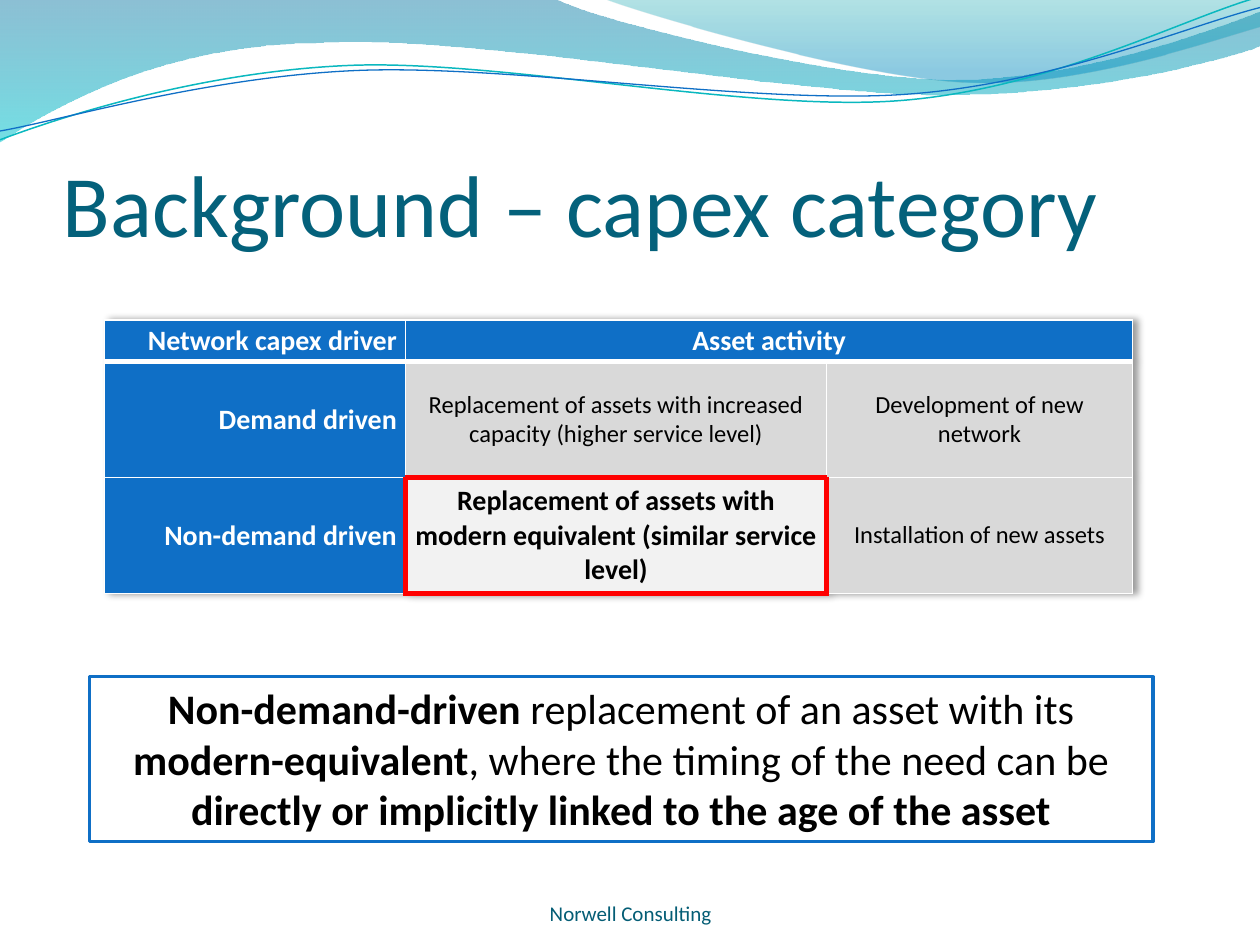
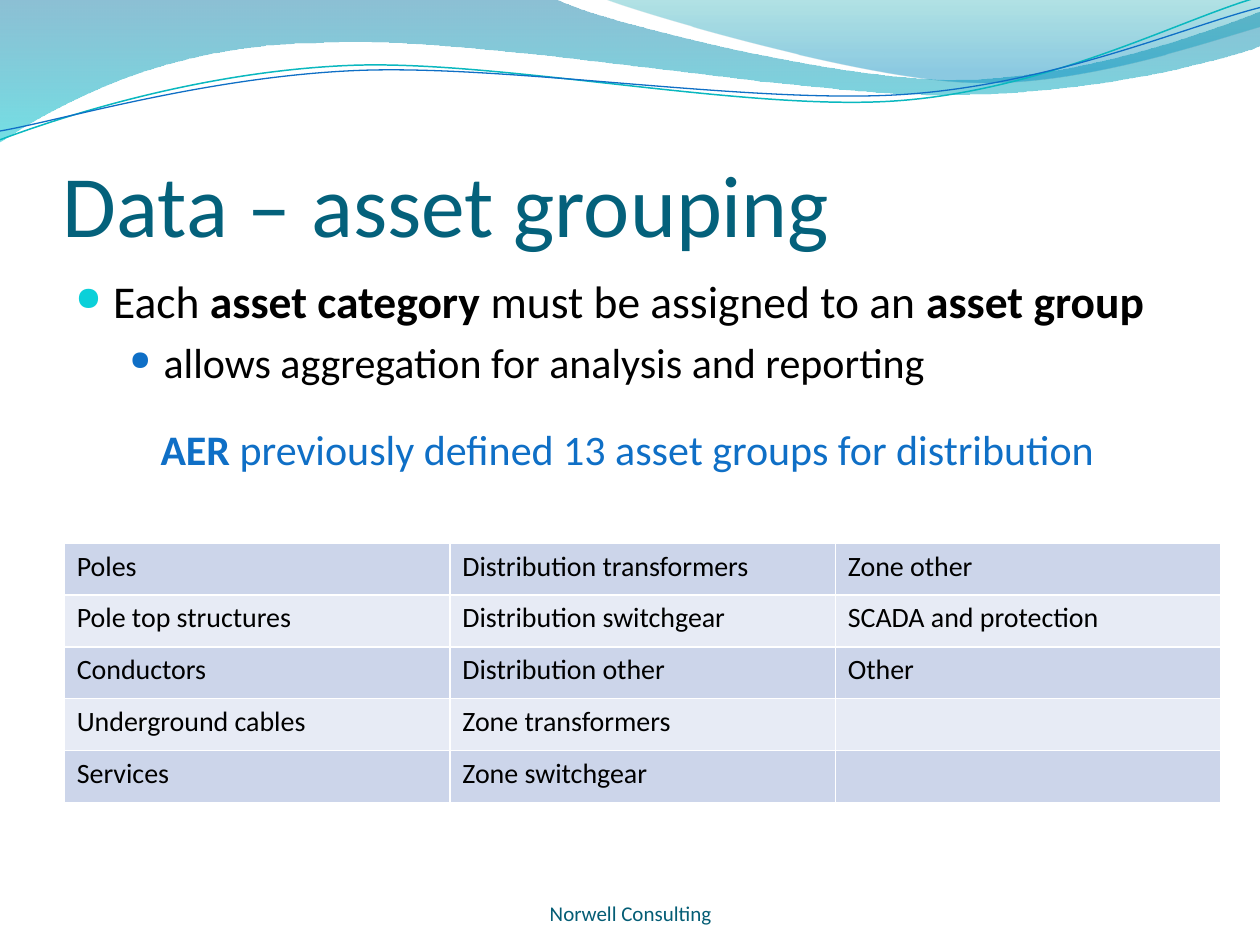
from dataclasses import dataclass
from typing import NamedTuple

from lxml import etree
from pptx import Presentation
from pptx.dml.color import RGBColor
from pptx.enum.shapes import MSO_SHAPE
from pptx.enum.text import MSO_ANCHOR, MSO_AUTO_SIZE, PP_ALIGN
from pptx.oxml.ns import qn
from pptx.util import Inches, Pt

LEFT, CENTER, RIGHT = PP_ALIGN.LEFT, PP_ALIGN.CENTER, PP_ALIGN.RIGHT
TOP, MIDDLE, BOTTOM = MSO_ANCHOR.TOP, MSO_ANCHOR.MIDDLE, MSO_ANCHOR.BOTTOM
RECTANGLE = MSO_SHAPE.RECTANGLE
GROW = MSO_AUTO_SIZE.SHAPE_TO_FIT_TEXT

FONT = "Calibri"
WHITE, BLACK, RED = "FFFFFF", "000000", "FF0000"
BLUE, TITLE_TEAL, FOOTER_TEAL = "0F6FC6", "04617B", "045D75"
CYAN, LINE_TEAL = "0BD0D9", "0AB8BF"
CELL_GREY, HIGHLIGHT_GREY = "D9D9D9", "F2F2F2"
BAND_COLORS = ("CCD5EA", "E7EBF5")

DEFAULT_INSETS = (0.1, 0.05, 0.1, 0.05)
FOOTER = "Norwell Consulting"


class Box(NamedTuple):
    left: float
    top: float
    width: float
    height: float


class Phrase(NamedTuple):
    text: str
    bold: bool = False


class GradientStop(NamedTuple):
    position: float
    color: str
    opacity: int


class Border(NamedTuple):
    color: str
    width: float


@dataclass(frozen=True)
class TextStyle:
    size: float
    color: str = BLACK
    align: PP_ALIGN = LEFT
    before: float = 0
    after: float = 0
    margin: float = 0
    indent: float = 0
    bullet_color: str = ""
    bullet_percent: int = 100
    level: int = 0


@dataclass(frozen=True)
class Wave:
    """Each step is a straight line (one point) or a Bezier curve (three)."""
    start: tuple
    steps: tuple
    stops: tuple = ()
    line: Border | None = None


TITLE = TextStyle(50, TITLE_TEAL)
FOOTER_STYLE = TextStyle(12, FOOTER_TEAL, CENTER)
BULLET = TextStyle(26, before=5, margin=0.3, indent=-0.3,
                   bullet_color=CYAN, bullet_percent=73)
SUB_BULLET = TextStyle(24, before=5, margin=0.7, indent=-0.27,
                       bullet_color=BLUE, bullet_percent=64, level=1)
LEAD_IN = TextStyle(24, BLUE, CENTER, before=5, margin=0.3, indent=-0.3)
CALLOUT = TextStyle(24, align=CENTER)
GROUP_CELL = TextStyle(16)
DRIVER_CELL = TextStyle(16, WHITE, RIGHT, 6, 6)
HEADING_CELL = TextStyle(16, WHITE, CENTER, 6, 6)
ACTIVITY_CELL = TextStyle(14, BLACK, CENTER, 6, 6)
HIGHLIGHT_CELL = TextStyle(16, BLACK, CENTER, 6, 6)

THIN, THICK, MARKED = Border(WHITE, 1), Border(WHITE, 3), Border(RED, 3)
HIGHLIGHT = (2, 1)
SIDES = {"lnL": (0, -1), "lnR": (0, 1), "lnT": (-1, 0), "lnB": (1, 0)}

WAVES = (
    Wave((0, -0.01), (
        [(4.4, -0.01)],
        [(4.76, 0.17), (6.64, 0.63), (7.58, 0.63)],
        [(8.53, 0.63), (9.58, 0.26), (10, 0.09)],
        [(10.01, 0.36)],
        [(9.83, 0.44), (8.7, 0.76), (7.46, 0.75)],
        [(6.22, 0.75), (3.82, 0.28), (2.57, 0.34)],
        [(1.29, 0.35), (0.46, 0.83), (-0.01, 1.13)],
    ), stops=(GradientStop(0, "0074A1", 45), GradientStop(1, "00C6CF", 55))),
    Wave((4.79, -0.01), (
        [(5.09, 0.11), (6.82, 0.62), (7.69, 0.65)],
        [(8.56, 0.69), (9.61, 0.32), (10, 0.21)],
        [(10, 0)],
    ), stops=(GradientStop(0, "00A1A9", 30), GradientStop(0.8, "008BBF", 45))),
    Wave((0, 1.11), (
        [(0.48, 0.93), (1.58, 0.57), (2.77, 0.52)],
        [(3.95, 0.47), (5.93, 0.89), (7.13, 0.8)],
        [(8.33, 0.71), (9.38, 0.15), (9.98, -0.02)],
    ), line=Border(LINE_TEAL, 0.85)),
    Wave((0, 1.04), (
        [(0.47, 0.96), (1.64, 0.61), (2.83, 0.56)],
        [(4.03, 0.51), (5.97, 0.83), (7.17, 0.75)],
        [(8.36, 0.67), (9.41, 0.21), (10, 0.06)],
    ), line=Border(BLUE, 0.75)),
)

CAPEX_ROWS = (
    ("Network capex driver", "Asset activity", ""),
    ("Demand driven",
     "Replacement of assets with increased capacity (higher service level)",
     "Development of new network"),
    ("Non-demand driven",
     "Replacement of assets with modern equivalent (similar service level)",
     "Installation of new assets"),
)
ASSET_GROUPS = (
    ("Poles", "Distribution transformers", "Zone other"),
    ("Pole top structures", "Distribution switchgear", "SCADA and protection"),
    ("Conductors", "Distribution other", "Other"),
    ("Underground cables", "Zone transformers", ""),
    ("Services", "Zone switchgear", ""),
)


def rgb(color: str) -> RGBColor:
    return RGBColor.from_string(color)


def inches(values) -> list:
    return [Inches(value) for value in values]


def add_child(parent, tag: str, **attributes):
    return etree.SubElement(parent, qn(f"a:{tag}"),
                            {key: str(value) for key, value in attributes.items()})


def write_paragraph(paragraph, phrases, style: TextStyle) -> None:
    paragraph.alignment = style.align
    paragraph.level = style.level
    paragraph.space_before, paragraph.space_after = Pt(style.before), Pt(style.after)
    properties = paragraph._p.get_or_add_pPr()
    properties.set("marL", str(Inches(style.margin)))
    properties.set("indent", str(Inches(style.indent)))
    if style.bullet_color:
        add_child(add_child(properties, "buClr"), "srgbClr", val=style.bullet_color)
        add_child(properties, "buSzPct", val=style.bullet_percent * 1000)
        add_child(properties, "buChar", char="●")
    for phrase in phrases:
        run = paragraph.add_run()
        run.text = phrase.text
        run.font.name, run.font.size = FONT, Pt(style.size)
        run.font.bold = phrase.bold
        run.font.color.rgb = rgb(style.color)


def set_frame(frame, anchor: MSO_ANCHOR, insets) -> None:
    frame.word_wrap = True
    frame.vertical_anchor = anchor
    (frame.margin_left, frame.margin_top,
     frame.margin_right, frame.margin_bottom) = inches(insets)


def add_text(slide, box: Box, paragraphs, anchor: MSO_ANCHOR = TOP,
             insets=DEFAULT_INSETS) -> None:
    frame = slide.shapes.add_textbox(*inches(box)).text_frame
    set_frame(frame, anchor, insets)
    for index, (phrases, style) in enumerate(paragraphs):
        paragraph = frame.add_paragraph() if index else frame.paragraphs[0]
        write_paragraph(paragraph, phrases, style)


def bend_curves(outline, steps) -> None:
    """Turn each three-point step of the outline into one Bezier curve."""
    segments = iter(outline.findall(qn("a:lnTo")))
    for step in steps:
        parts = [next(segments) for _ in step]
        if len(parts) == 3:
            curve = etree.Element(qn("a:cubicBezTo"))
            parts[0].addprevious(curve)
            for part in parts:
                curve.append(part[0])
                outline.remove(part)


def add_wave(slide, wave: Wave):
    builder = slide.shapes.build_freeform(*inches(wave.start))
    builder.add_line_segments([inches(point) for step in wave.steps for point in step],
                              close=bool(wave.stops))
    shape = builder.convert_to_shape()
    bend_curves(next(shape._element.iter(qn("a:path"))), wave.steps)
    shape.shadow.inherit = False
    if wave.line:
        shape.fill.background()
        shape.line.color.rgb = rgb(wave.line.color)
        shape.line.width = Pt(wave.line.width)
        return shape
    shape.line.fill.background()
    shape.fill.gradient()
    shape.fill.gradient_angle = 270
    for target, stop in zip(shape.fill.gradient_stops, wave.stops):
        target.position = stop.position
        target.color.rgb = rgb(stop.color)
    gradient = shape._element.spPr.find(qn("a:gradFill"))
    for color, stop in zip(gradient.iter(qn("a:srgbClr")), wave.stops):
        add_child(color, "alpha", val=stop.opacity * 1000)
    return shape


def add_waves_to_layout(slide) -> None:
    """Draw the waves on a slide, then move them to the layout all slides share."""
    for wave in WAVES:
        slide.slide_layout.shapes._spTree.append(add_wave(slide, wave)._element)


def add_base_slide(deck, title: str):
    slide = deck.slides.add_slide(deck.slide_layouts[6])
    add_text(slide, Box(0.5, 0.77, 9, 1.25), [([Phrase(title)], TITLE)],
             BOTTOM, (0, 0.05, 0, 0))
    add_text(slide, Box(3.17, 6.95, 3.67, 0.4), [([Phrase(FOOTER)], FOOTER_STYLE)],
             BOTTOM, (0, 0, 0, 0))
    return slide


def add_plain_table(slide, box: Box, widths, heights):
    table = slide.shapes.add_table(len(heights), len(widths), *inches(box)).table
    table.first_row = table.horz_banding = False
    for column, width in zip(table.columns, widths):
        column.width = Inches(width)
    for row, height in zip(table.rows, heights):
        row.height = Inches(height)
    return table


def fill_cell(cell, phrase: Phrase, style: TextStyle, fill: str, borders) -> None:
    cell.fill.solid()
    cell.fill.fore_color.rgb = rgb(fill)
    if phrase.text:
        write_paragraph(cell.text_frame.paragraphs[0], [phrase], style)
    properties = cell._tc.get_or_add_tcPr()
    for index, (side, border) in enumerate(borders.items()):
        line = add_child(properties, side, w=Pt(border.width))
        add_child(add_child(line, "solidFill"), "srgbClr", val=border.color)
        properties.insert(index, line)


def capex_border(row: int, column: int, side: str) -> Border:
    down, across = SIDES[side]
    if HIGHLIGHT in ((row, column), (row + down, column + across)):
        return MARKED
    return THICK if (row, side) in ((0, "lnB"), (1, "lnT")) else THIN


def capex_look(row: int, column: int) -> tuple:
    """Text style, fill and boldness of one cell."""
    if column == 0:
        return DRIVER_CELL, BLUE, True
    if row == 0:
        return HEADING_CELL, BLUE, True
    if (row, column) == HIGHLIGHT:
        return HIGHLIGHT_CELL, HIGHLIGHT_GREY, True
    return ACTIVITY_CELL, CELL_GREY, False


def add_capex_table(slide) -> None:
    table = add_plain_table(slide, Box(0.83, 2.54, 8.16, 2.17),
                            (2.39, 3.34, 2.43), (0.33, 0.92, 0.92))
    for row, texts in enumerate(CAPEX_ROWS):
        for column, text in enumerate(texts):
            cell = table.cell(row, column)
            style, fill, bold = capex_look(row, column)
            borders = {side: capex_border(row, column, side) for side in SIDES}
            fill_cell(cell, Phrase(text, bold), style, fill, borders)
            cell.vertical_anchor = MIDDLE
            cell.margin_left = cell.margin_right = Inches(0.07)
            cell.margin_top = cell.margin_bottom = 0
    table.cell(0, 1).merge(table.cell(0, 2))
    properties = table._tbl.tblPr
    effects = add_child(properties, "effectLst")
    shadow = add_child(effects, "outerShdw", blurRad=Pt(4), dist=Pt(3), dir=0,
                       algn="l", rotWithShape=0)
    add_child(add_child(shadow, "srgbClr", val=BLACK), "alpha", val=40000)
    properties.insert(0, effects)


def add_callout(slide, box: Box, phrases) -> None:
    callout = slide.shapes.add_shape(RECTANGLE, *inches(box))
    callout.shadow.inherit = False
    callout.fill.solid()
    callout.fill.fore_color.rgb = rgb(WHITE)
    callout.line.color.rgb = rgb(BLUE)
    callout.line.width = Pt(2)
    set_frame(callout.text_frame, TOP, DEFAULT_INSETS)
    callout.text_frame.auto_size = GROW
    write_paragraph(callout.text_frame.paragraphs[0], phrases, CALLOUT)


def add_asset_group_table(slide) -> None:
    table = add_plain_table(slide, Box(0.51, 4.31, 9.18, 2.06),
                            [3.06] * 3, [2.06 / 5] * 5)
    for row, names in enumerate(ASSET_GROUPS):
        for column, name in enumerate(names):
            fill_cell(table.cell(row, column), Phrase(name), GROUP_CELL,
                      BAND_COLORS[row % 2], dict.fromkeys(SIDES, THIN))


def main() -> None:
    deck = Presentation()
    deck.slide_width, deck.slide_height = Inches(10), Inches(7.5)

    category = add_base_slide(deck, "Background – capex category")
    add_waves_to_layout(category)
    add_capex_table(category)
    add_callout(category, Box(0.71, 5.37, 8.44, 1.31), [
        Phrase("Non-demand-driven", True),
        Phrase(" replacement of an asset with its "),
        Phrase("modern-equivalent", True),
        Phrase(", where the timing of the need can be "),
        Phrase("directly or implicitly linked to the age of the asset", True)])

    grouping = add_base_slide(deck, "Data – asset grouping")
    add_text(grouping, Box(0.5, 2.12, 9, 1.13), [
        ([Phrase("Each "), Phrase("asset category ", True),
          Phrase("must be assigned to an "), Phrase("asset group", True)], BULLET),
        ([Phrase("allows aggregation for analysis and reporting")], SUB_BULLET)])
    add_text(grouping, Box(0.56, 3.31, 8.84, 0.69), [
        ([Phrase("AER", True),
          Phrase(" previously defined 13 asset groups for distribution")], LEAD_IN)])
    add_asset_group_table(grouping)

    deck.save("out.pptx")


if __name__ == "__main__":
    main()
